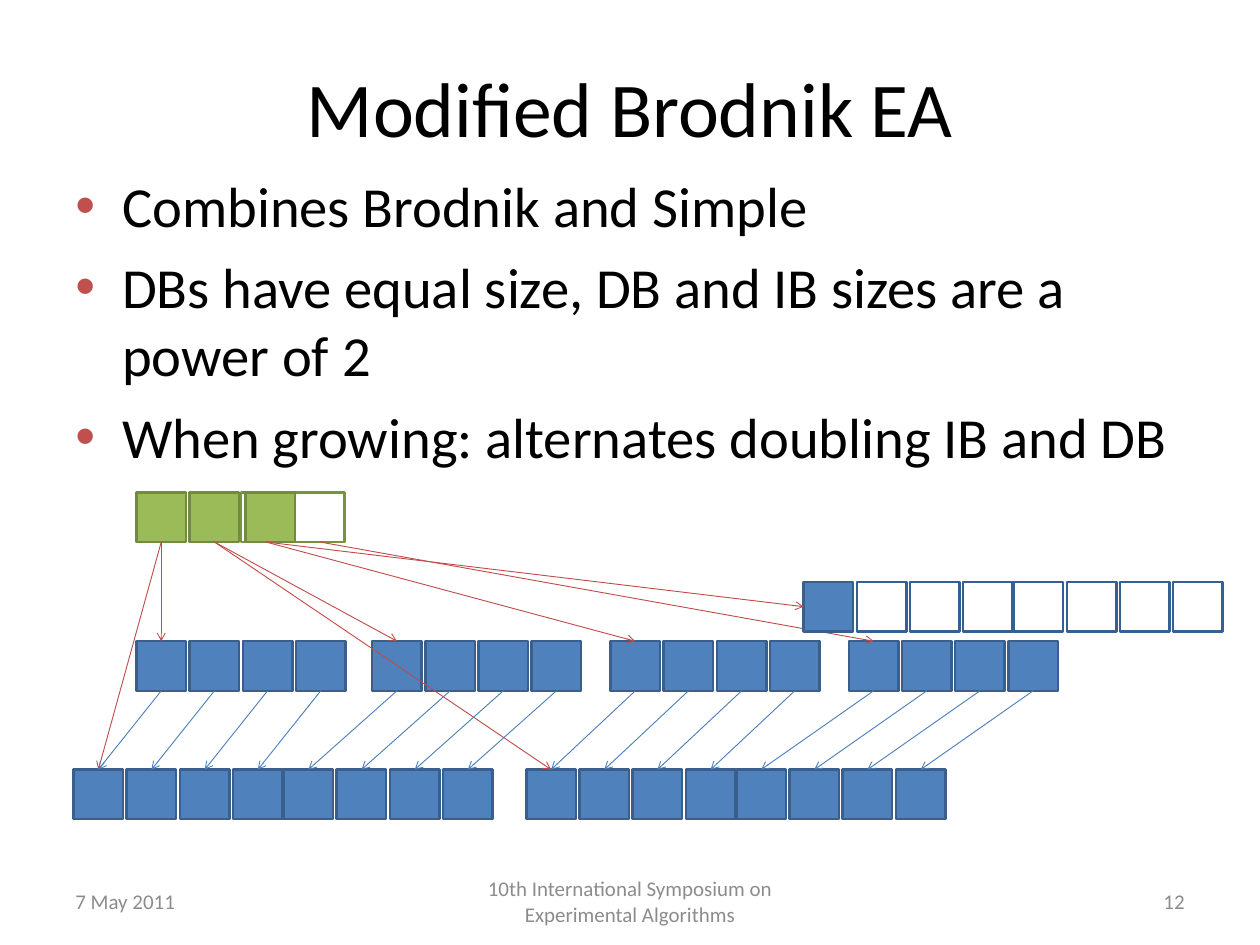
from dataclasses import dataclass

from lxml import etree
from pptx import Presentation
from pptx.dml.color import RGBColor
from pptx.enum.shapes import MSO_CONNECTOR as CONN, MSO_SHAPE as SHAPE
from pptx.enum.text import MSO_ANCHOR as ANCHOR, PP_ALIGN as ALIGN
from pptx.oxml.ns import qn
from pptx.util import Inches, Pt

TOP, LEFT, BOTTOM = 0, 1, 2


@dataclass(frozen=True)
class Theme:
    font: str = "Calibri"
    title: float = 63
    body: float = 46
    footer: float = 17
    body_gap: float = 11
    cell_line: float = 2
    arrow_line: float = 0.75
    text: str = "000000"
    muted: str = "8C8C8C"
    bullet: str = "C0504D"
    red: str = "BF4C48"
    blue: str = "4B7EBC"
    # Fill and line of each kind of cell
    index_used: tuple = ("9BBB59", "738A42")
    index_free: tuple = ("FFFFFF", "77933C")
    data_used: tuple = ("4F81BD", "3A5F8C")
    data_free: tuple = ("FFFFFF", "376092")


class Deck:
    CELL, PITCH, HALF_ROW = 0.56, 0.6, 2.37

    def __init__(self, slide, theme):
        self.slide, self.theme = slide, theme

    def fill_text(self, sp, lines, size, color, align, anchor):
        tf = sp.text_frame
        frame = {
            "word_wrap": True, "vertical_anchor": anchor,
            "margin_left": Inches(0.14), "margin_right": Inches(0.14),
            "margin_top": Inches(0.07), "margin_bottom": Inches(0.07),
        }
        for name, value in frame.items():
            setattr(tf, name, value)
        for i, line in enumerate(lines):
            p = tf.paragraphs[0] if i == 0 else tf.add_paragraph()
            p.alignment = align
            r = p.add_run()
            r.text = line
            for name, value in {"name": self.theme.font, "size": Pt(size)}.items():
                setattr(r.font, name, value)
            r.font.color.rgb = RGBColor.from_string(color)
        return tf

    def title(self, text, left, top, width, height):
        sp = self.slide.shapes.title
        box = {"left": left, "top": top, "width": width, "height": height}
        for name, value in box.items():
            setattr(sp, name, Inches(value))
        self.fill_text(sp, [text], self.theme.title, self.theme.text,
                       ALIGN.CENTER, ANCHOR.MIDDLE)

    def text(self, lines, box, size, color, align=ALIGN.LEFT, anchor=ANCHOR.MIDDLE):
        sp = self.slide.shapes.add_textbox(*map(Inches, box))
        return self.fill_text(sp, lines, size, color, align, anchor)

    def bullets(self, lines, box):
        tf = self.text(lines, box, self.theme.body, self.theme.text, anchor=ANCHOR.TOP)
        indent = Inches(0.53)
        for p in tf.paragraphs:
            p.space_before = Pt(self.theme.body_gap)
            pPr = p._p.get_or_add_pPr()
            pPr.set("marL", str(indent))
            pPr.set("indent", str(-indent))
            color = etree.SubElement(pPr, qn("a:buClr"))
            etree.SubElement(color, qn("a:srgbClr"), val=self.theme.bullet)
            etree.SubElement(pPr, qn("a:buFont"), typeface="Arial")
            etree.SubElement(pPr, qn("a:buChar"), char="•")

    def cell(self, left, top, style):
        sp = self.slide.shapes.add_shape(
            SHAPE.RECTANGLE, *map(Inches, (left, top, self.CELL, self.CELL)))
        fill, line = style
        sp.shadow.inherit = False
        sp.fill.solid()
        sp.fill.fore_color.rgb = RGBColor.from_string(fill)
        sp.line.color.rgb = RGBColor.from_string(line)
        sp.line.width = Pt(self.theme.cell_line)
        return sp

    def block(self, left, top, styles):
        return [self.cell(left + i * self.PITCH, top, style)
                for i, style in enumerate(styles)]

    def double_block(self, left, top, styles):
        return (self.block(left, top, styles[:4])
                + self.block(left + self.HALF_ROW, top, styles[4:]))

    def arrow(self, start, end, color, side=TOP):
        c = self.slide.shapes.add_connector(CONN.STRAIGHT, 0, 0, 0, 0)
        c.begin_connect(start, BOTTOM)
        c.end_connect(end, side)
        c.line.color.rgb = RGBColor.from_string(color)
        c.line.width = Pt(self.theme.arrow_line)
        etree.SubElement(c.line._get_or_add_ln(), qn("a:tailEnd"), type="arrow")
        etree.SubElement(c._element.spPr, qn("a:effectLst"))


def main():
    prs = Presentation()
    prs.slide_width, prs.slide_height = Inches(14.22), Inches(10.67)
    theme = Theme()
    deck = Deck(prs.slides.add_slide(prs.slide_layouts[5]), theme)

    # Title and bullets
    deck.title("Modified Brodnik EA", 0.71, 0.37, 12.8, 1.66)
    deck.bullets([
        "Combines Brodnik and Simple",
        "DBs have equal size, DB and IB sizes are a power of 2",
        "When growing: alternates doubling IB and DB",
    ], (0.71, 1.86, 12.8, 3.58))

    # Index block: a free slot lies behind the third used one
    index_top = 5.56
    index = deck.block(1.54, index_top, [theme.index_used] * 2)
    index += [deck.cell(x, index_top, theme.index_free) for x in (2.72, 3.33)]
    deck.cell(2.77, index_top, theme.index_used)

    # Data blocks before doubling
    small = [deck.block(x, 7.24, [theme.data_used] * 4)
             for x in (1.54, 4.2, 6.89, 9.58)]
    for slot, block in zip(index, small):
        deck.arrow(slot, block[0], theme.red)

    # Data blocks after doubling
    full = [theme.data_used] * 8
    fresh = [theme.data_used] + [theme.data_free] * 7
    large = [deck.double_block(x, y, styles) for x, y, styles in (
        (0.83, 8.69, full), (5.94, 8.69, full), (9.07, 6.57, fresh))]
    for slot, block, side in zip(index, large, (TOP, TOP, LEFT)):
        deck.arrow(slot, block[0], theme.red, side)

    # Elements move from the small blocks to the large ones
    for old, new in zip(sum(small, []), large[0] + large[1]):
        deck.arrow(old, new, theme.blue)

    # Footer
    for text, left, width, align in (
        ("7 May 2011", 0.71, 3.32, ALIGN.LEFT),
        ("10th International Symposium on Experimental Algorithms",
         4.86, 4.5, ALIGN.CENTER),
        ("12", 10.19, 3.32, ALIGN.RIGHT),
    ):
        deck.text([text], (left, 9.89, width, 0.57), theme.footer, theme.muted, align)

    prs.save("out.pptx")


if __name__ == "__main__":
    main()
